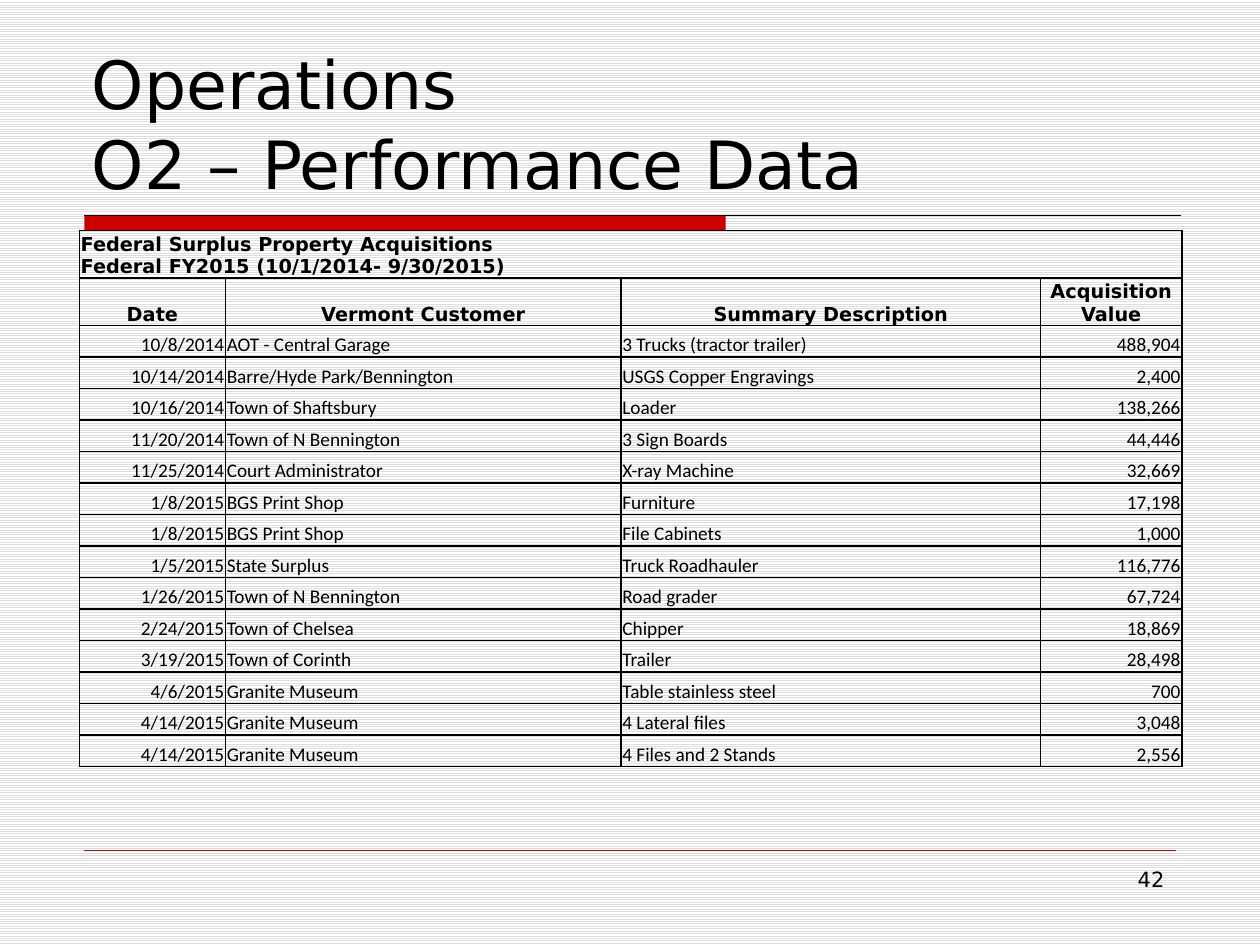
from dataclasses import dataclass

from lxml.etree import SubElement
from pptx import Presentation
from pptx.dml.color import RGBColor
from pptx.enum.dml import MSO_PATTERN
from pptx.enum.shapes import MSO_CONNECTOR, MSO_SHAPE
from pptx.enum.text import MSO_ANCHOR, MSO_AUTO_SIZE, PP_ALIGN as ALIGN
from pptx.oxml.ns import qn
from pptx.util import Inches, Pt


@dataclass(frozen=True)
class Theme:
    ink: str = "000000"
    accent: str = "CC0000"
    stripe: str = "DDDDDD"
    paper: str = "FFFFFF"
    head_font: str = "DejaVu Sans"
    body_font: str = "Calibri"
    title_size: int = 38
    number_size: int = 12
    table_size: int = 11


THEME = Theme()

CAPTION = ("Federal Surplus Property Acquisitions\n"
           "Federal FY2015 (10/1/2014- 9/30/2015)")
HEADINGS = ("Date", "Vermont Customer", "Summary Description", "Acquisition Value")
ACQUISITIONS = (
    ("10/8/2014", "AOT - Central Garage", "3 Trucks (tractor trailer)", "488,904"),
    ("10/14/2014", "Barre/Hyde Park/Bennington", "USGS Copper Engravings", "2,400"),
    ("10/16/2014", "Town of Shaftsbury", "Loader", "138,266"),
    ("11/20/2014", "Town of N Bennington", "3 Sign Boards", "44,446"),
    ("11/25/2014", "Court Administrator", "X-ray Machine", "32,669"),
    ("1/8/2015", "BGS Print Shop", "Furniture", "17,198"),
    ("1/8/2015", "BGS Print Shop", "File Cabinets", "1,000"),
    ("1/5/2015", "State Surplus", "Truck Roadhauler", "116,776"),
    ("1/26/2015", "Town of N Bennington", "Road grader", "67,724"),
    ("2/24/2015", "Town of Chelsea", "Chipper", "18,869"),
    ("3/19/2015", "Town of Corinth", "Trailer", "28,498"),
    ("4/6/2015", "Granite Museum", "Table stainless steel", "700"),
    ("4/14/2015", "Granite Museum", "4 Lateral files", "3,048"),
    ("4/14/2015", "Granite Museum", "4 Files and 2 Stands", "2,556"),
)
COLUMN_WIDTHS = (1.16, 3.14, 3.33, 1.12)
COLUMN_ALIGNS = (ALIGN.RIGHT, ALIGN.LEFT, ALIGN.LEFT, ALIGN.RIGHT)
HEAD_HEIGHT, ROW_HEIGHT = 0.37, 0.25


def rgb(value):
    return RGBColor.from_string(value)


def set_text(tf, text, size, font=THEME.head_font, bold=False, align=ALIGN.LEFT):
    """Fill a text frame; a newline starts a paragraph, a \\v breaks a line."""
    tf.word_wrap = True
    tf.text = text
    for p in tf.paragraphs:
        p.alignment = align
        for r in p.runs:
            r.font.name = font
            r.font.size = Pt(size)
            r.font.bold = bold
            r.font.color.rgb = rgb(THEME.ink)


def add_background(s):
    fill = s.background.fill
    fill.patterned()
    fill.pattern = MSO_PATTERN.LIGHT_HORIZONTAL
    fill.fore_color.rgb = rgb(THEME.stripe)
    fill.back_color.rgb = rgb(THEME.paper)


def add_rule(s, left, right, y, color, width):
    line = s.shapes.add_connector(MSO_CONNECTOR.STRAIGHT, Inches(left), Inches(y),
                                  Inches(right), Inches(y))
    line.line.color.rgb = rgb(color)
    line.line.width = Pt(width)
    SubElement(line._element.spPr, qn("a:effectLst"))


def add_band(s, left, top, width, height):
    sp = s.shapes.add_shape(MSO_SHAPE.RECTANGLE, Inches(left), Inches(top),
                            Inches(width), Inches(height))
    sp.shadow.inherit = False
    sp.fill.solid()
    sp.fill.fore_color.rgb = rgb(THEME.accent)
    sp.line.fill.background()


def add_title(s, text):
    title = s.shapes.title
    title.left, title.top = Inches(0.63), Inches(0.33)
    title.width, title.height = Inches(8.75), Inches(1.33)
    tf = title.text_frame
    tf.auto_size = MSO_AUTO_SIZE.NONE
    tf.vertical_anchor = MSO_ANCHOR.BOTTOM
    set_text(tf, text, THEME.title_size)


def add_page_number(s, number):
    box = s.shapes.add_textbox(Inches(7.17), Inches(6.83), Inches(2.17), Inches(0.52))
    set_text(box.text_frame, number, THEME.number_size, align=ALIGN.RIGHT)


def format_cell(cell):
    cell.margin_left = cell.margin_right = cell.margin_top = Inches(0.01)
    cell.margin_bottom = 0
    cell.vertical_anchor = MSO_ANCHOR.BOTTOM
    tc_pr = cell._tc.get_or_add_tcPr()
    for side in ("lnL", "lnR", "lnT", "lnB"):
        ln = SubElement(tc_pr, qn(f"a:{side}"), w=str(Pt(1)))
        fill = SubElement(ln, qn("a:solidFill"))
        SubElement(fill, qn("a:srgbClr"), val=THEME.ink)
    cell.fill.background()


def add_acquisitions_table(s):
    rows, cols = len(ACQUISITIONS) + 2, len(HEADINGS)
    height = 2 * HEAD_HEIGHT + len(ACQUISITIONS) * ROW_HEIGHT
    table = s.shapes.add_table(rows, cols, Inches(0.63), Inches(1.83),
                               Inches(sum(COLUMN_WIDTHS)), Inches(height)).table
    table.first_row = table.horz_banding = False
    for column, width in zip(table.columns, COLUMN_WIDTHS):
        column.width = Inches(width)
    for i, row in enumerate(table.rows):
        row.height = Inches(HEAD_HEIGHT if i < 2 else ROW_HEIGHT)
    for cell in table.iter_cells():
        format_cell(cell)

    # Caption across all columns, then headings and data
    table.cell(0, 0).merge(table.cell(0, cols - 1))
    set_text(table.cell(0, 0).text_frame, CAPTION, THEME.table_size, bold=True)
    for j, heading in enumerate(HEADINGS):
        set_text(table.cell(1, j).text_frame, heading, THEME.table_size,
                 bold=True, align=ALIGN.CENTER)
    for i, record in enumerate(ACQUISITIONS, start=2):
        for j, (value, align) in enumerate(zip(record, COLUMN_ALIGNS)):
            set_text(table.cell(i, j).text_frame, value, THEME.table_size,
                     font=THEME.body_font, align=align)


def main():
    prs = Presentation()
    prs.slide_width, prs.slide_height = Inches(10), Inches(7.5)
    s = prs.slides.add_slide(prs.slide_layouts[5])
    add_background(s)

    # Title with its band and rule
    add_title(s, "Operations\vO2 – Performance Data")
    add_band(s, 0.67, 1.71, 5.09, 0.12)
    add_rule(s, 0.67, 9.37, 1.71, THEME.ink, 0.75)

    # Footer
    add_rule(s, 0.67, 9.33, 6.75, THEME.accent, 0.25)
    add_page_number(s, "42")

    add_acquisitions_table(s)
    prs.save("out.pptx")


if __name__ == "__main__":
    main()
